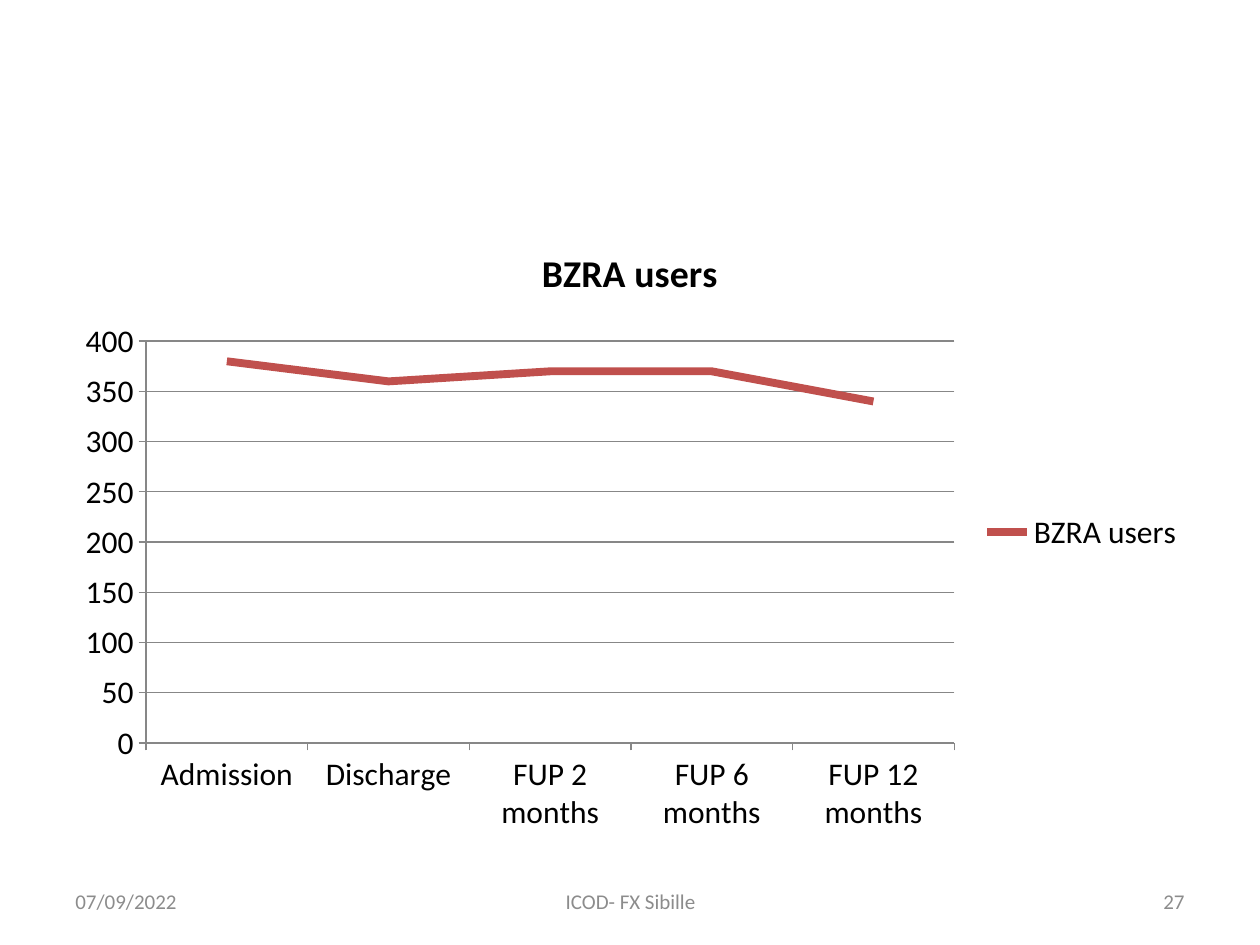
from dataclasses import dataclass

from pptx import Presentation
from pptx.chart.data import CategoryChartData
from pptx.dml.color import RGBColor
from pptx.enum.chart import XL_CHART_TYPE, XL_LEGEND_POSITION, XL_MARKER_STYLE, XL_TICK_MARK
from pptx.enum.text import MSO_ANCHOR, PP_ALIGN
from pptx.slide import Slide
from pptx.util import Inches, Pt

FONT = "Calibri"
BLACK = RGBColor(0x00, 0x00, 0x00)
GRAY = RGBColor(0x8C, 0x8C, 0x8C)
RULE = RGBColor(0x87, 0x87, 0x87)
RED = RGBColor(0xC0, 0x50, 0x4D)

NAME = "BZRA users"
USERS = {
    "Admission": 380,
    "Discharge": 360,
    "FUP 2 months": 370,
    "FUP 6 months": 370,
    "FUP 12 months": 340,
}


@dataclass
class Note:
    text: str
    left: float
    width: float
    align: PP_ALIGN


NOTES = [
    Note("07/09/2022", 0.5, 2.33, PP_ALIGN.LEFT),
    Note("ICOD- FX Sibille", 3.42, 3.17, PP_ALIGN.CENTER),
    Note("27", 7.17, 2.33, PP_ALIGN.RIGHT),
]


def style(font, size: float, color: RGBColor, bold: bool = False) -> None:
    font.name = FONT
    font.size = Pt(size)
    font.bold = bold
    font.color.rgb = color


def rule(line) -> None:
    line.color.rgb = RULE
    line.width = Pt(0.75)


def add_users(slide: Slide) -> None:
    data = CategoryChartData()
    data.categories = list(USERS)
    data.add_series(NAME, list(USERS.values()))
    chart = slide.shapes.add_chart(
        XL_CHART_TYPE.LINE, Inches(0.5), Inches(1.75), Inches(9), Inches(4.95), data
    ).chart
    style(chart.font, 18, BLACK)

    # Title and legend
    frame = chart.chart_title.text_frame
    frame.text = NAME
    style(frame.paragraphs[0].runs[0].font, 21.6, BLACK, True)
    chart.has_legend = True
    chart.legend.position = XL_LEGEND_POSITION.RIGHT
    chart.legend.include_in_layout = False

    # Axes
    for axis in (chart.category_axis, chart.value_axis):
        axis.major_tick_mark = XL_TICK_MARK.OUTSIDE
        axis.minor_tick_mark = XL_TICK_MARK.NONE
        rule(axis.format.line)
    scale = chart.value_axis
    scale.minimum_scale, scale.maximum_scale, scale.major_unit = 0, 400, 50
    scale.has_major_gridlines = True
    rule(scale.major_gridlines.format.line)

    # Line
    plot = chart.plots[0]
    plot.vary_by_categories = False
    users = plot.series[0]
    users.smooth = False
    users.marker.style = XL_MARKER_STYLE.NONE
    users.format.line.color.rgb = RED
    users.format.line.width = Pt(4.5)


def add_note(slide: Slide, note: Note) -> None:
    frame = slide.shapes.add_textbox(
        Inches(note.left), Inches(6.95), Inches(note.width), Inches(0.4)
    ).text_frame
    frame.word_wrap = True
    frame.vertical_anchor = MSO_ANCHOR.MIDDLE
    frame.text = note.text
    line = frame.paragraphs[0]
    line.alignment = note.align
    style(line.runs[0].font, 12, GRAY)


def main() -> None:
    deck = Presentation()
    deck.slide_width, deck.slide_height = Inches(10), Inches(7.5)
    slide = deck.slides.add_slide(deck.slide_layouts[6])
    add_users(slide)

    # Footer
    for note in NOTES:
        add_note(slide, note)
    deck.save("out.pptx")


if __name__ == "__main__":
    main()
